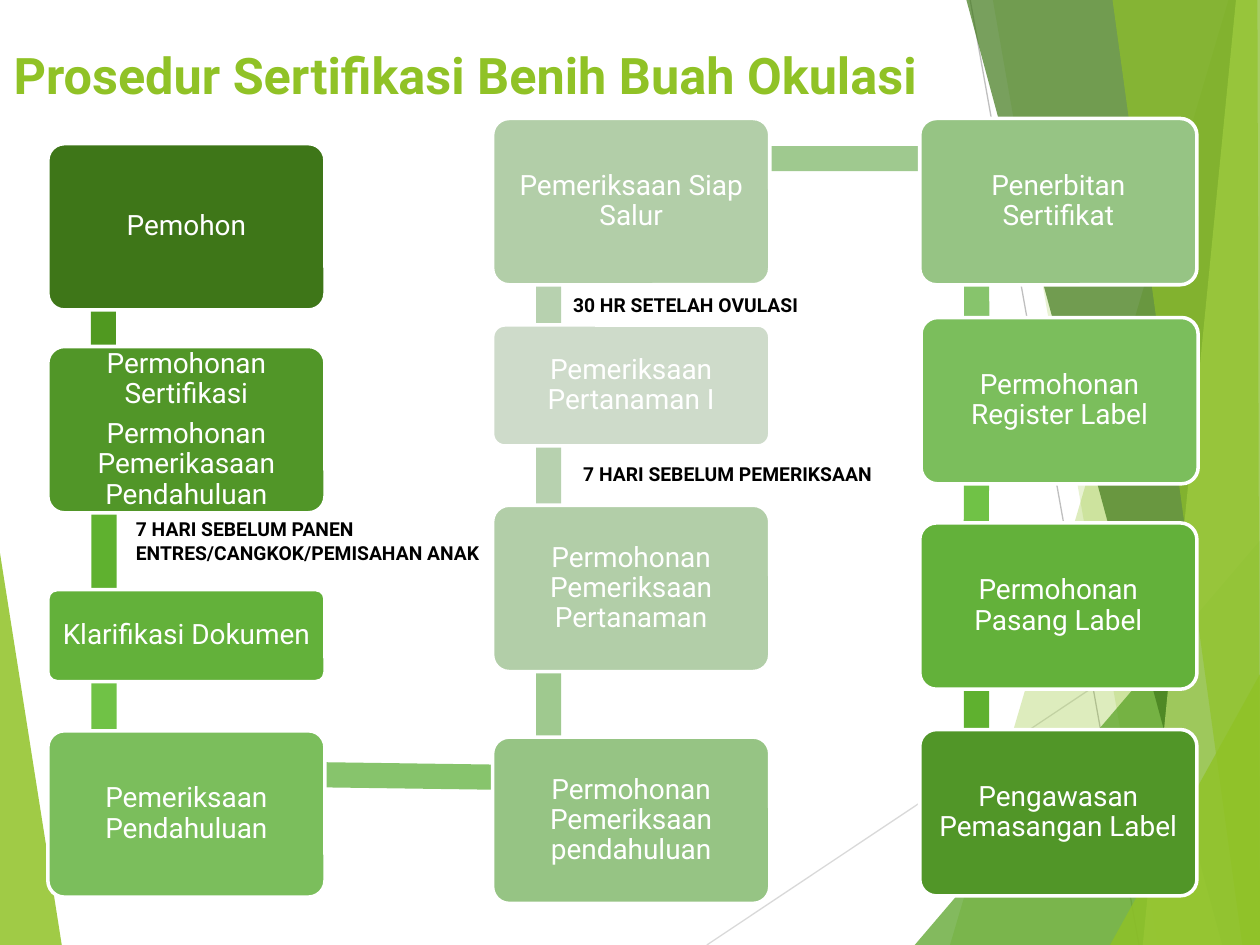
from dataclasses import dataclass
from lxml.etree import SubElement
from pptx import Presentation
from pptx.dml.color import RGBColor
from pptx.enum.shapes import MSO_CONNECTOR, MSO_SHAPE
from pptx.enum.text import MSO_ANCHOR, PP_ALIGN
from pptx.oxml.ns import qn
from pptx.slide import Slide
from pptx.util import Inches, Pt

FACETS = [
    ("90C226", 85, [(0, 4.39), (0.49, 7.5), (0, 7.5)]),
    ("90C226", 30, [(9.75, 0), (7.54, 7.5), (10, 7.5), (10, 0)]),
    ("90C226", 20, [(7.88, 0), (9.19, 7.5), (10, 7.5), (10, 0)]),
    ("54A021", 72, [(7.26, 7.5), (10, 4.29), (10, 7.5)]),
    ("3F7819", 70, [(7.67, 0), (9.7, 7.5), (10, 7.5), (10, 0)]),
    ("C0E474", 70, [(9.81, 0), (9.07, 7.5), (10, 7.5), (10, 0)]),
    ("90C226", 65, [(8.83, 0), (9.86, 7.5), (10, 7.5), (9.98, 0)]),
    ("90C226", 80, [(8.81, 7.5), (10, 5.35), (10, 7.5)]),
]
RAYS = [("D9D9D9", (5.61, 7.5), (10, 4.57)), ("BFBFBF", (7.7, 0), (9.04, 7.5))]
LINKS = [
    (0.02, 2.16, 1.6, 90, "509920"),
    (0.01, 3.79, 1.63, 90, "5FB12F"),
    (0.12, 5.31, 1.41, 90, "70C246"),
    (0.82, 6.05, 3.53, 0.8, "87C46C"),
    (3.44, 5.15, 1.83, 270, "9FC98F"),
    (3.55, 3.43, 1.61, 270, "B7D1AF"),
    (3.63, 1.89, 1.45, 270, "B7D1AF"),
    (4.36, 1.16, 3.38, 0, "9FC98F"),
    (6.96, 1.95, 1.58, 89.8, "87C46C"),
    (6.94, 3.56, 1.62, 90.2, "70C246"),
    (6.93, 5.19, 1.64, 90.1, "5FB12F"),
]
STEPS = [
    (0.38, 1.14, 1.32, "3E7618", "Pemohon"),
    (0.38, 2.75, 1.32, "519628", "Permohonan Sertifikasi\nPermohonan Pemerikasaan Pendahuluan"),
    (0.38, 4.68, 0.73, "63B13A", "Klarifikasi Dokumen"),
    (0.38, 5.8, 1.32, "7BBE5C", "Pemeriksaan Pendahuluan"),
    (3.91, 5.85, 1.32, "96C484", "Permohonan Pemeriksaan pendahuluan"),
    (3.91, 4.01, 1.32, "B2CEA8", "Permohonan Pemeriksaan Pertanaman"),
    (3.91, 2.58, 0.96, "CEDBCA", "Pemeriksaan Pertanaman I"),
    (3.91, 0.94, 1.32, "B2CEA8", "Pemeriksaan Siap Salur"),
    (7.3, 0.94, 1.32, "96C484", "Penerbitan Sertifikat"),
    (7.31, 2.52, 1.32, "7BBE5C", "Permohonan Register Label"),
    (7.3, 4.15, 1.32, "63B13A", "Permohonan Pasang Label"),
    (7.3, 5.79, 1.32, "519628", "Pengawasan Pemasangan Label"),
]
NOTES = [
    (0.98, 4.06, 0.66, "7 HARI SEBELUM PANEN ENTRES/CANGKOK/PEMISAHAN ANAK"),
    (4.53, 3.62, 0.29, "7 HARI SEBELUM PEMERIKSAAN"),
    (4.45, 2.28, 0.29, "30 HR SETELAH OVULASI"),
]


def color(value):
    """Turn a hex string into a colour."""
    return RGBColor.from_string(value)


def write(frame, text, *, font, size, fill, bold=False, align=PP_ALIGN.LEFT,
          spacing=None, after=0):
    """Write each line of the text as a formatted paragraph."""
    frame.word_wrap = True
    for index, line in enumerate(text.split("\n")):
        paragraph = frame.add_paragraph() if index else frame.paragraphs[0]
        paragraph.alignment = align
        paragraph.line_spacing = spacing
        paragraph.space_after = Pt(after)
        run = paragraph.add_run()
        run.text = line
        run.font.name = font
        run.font.size = Pt(size)
        run.font.bold = bold
        run.font.color.rgb = color(fill)


@dataclass
class FlowSlide:
    """Hold the slide and the style of the flow chart."""

    slide: Slide
    font: str = "Roboto"
    step_width: float = 2.2
    link_width: float = 0.2
    inset: float = 0.07

    def paint(self, shape, fill, alpha=100):
        """Give a shape a plain fill without line or shadow."""
        shape.shadow.inherit = False
        shape.line.fill.background()
        shape.fill.solid()
        shape.fill.fore_color.rgb = color(fill)
        if alpha < 100:
            tint = shape.fill._xPr.find(".//" + qn("a:srgbClr"))
            SubElement(tint, qn("a:alpha")).set("val", str(alpha * 1000))

    def facet(self, fill, alpha, points):
        """Draw a translucent background polygon."""
        start, *rest = [(Inches(x), Inches(y)) for x, y in points]
        builder = self.slide.shapes.build_freeform(*start)
        builder.add_line_segments(rest, close=True)
        self.paint(builder.convert_to_shape(), fill, alpha)

    def ray(self, line_color, start, end):
        """Draw a thin background line."""
        ends = [Inches(value) for value in start + end]
        connector = self.slide.shapes.add_connector(MSO_CONNECTOR.STRAIGHT, *ends)
        connector.line.color.rgb = color(line_color)
        connector.line.width = Pt(0.75)
        SubElement(connector._element.spPr, qn("a:effectLst"))

    def link(self, left, top, length, rotation, fill):
        """Draw a bar that links two steps."""
        shape = self.slide.shapes.add_shape(
            MSO_SHAPE.RECTANGLE, Inches(left), Inches(top), Inches(length), Inches(self.link_width))
        shape.rotation = rotation
        self.paint(shape, fill)

    def step(self, left, top, height, fill, text):
        """Draw a rounded box with a step of the procedure."""
        shape = self.slide.shapes.add_shape(
            MSO_SHAPE.ROUNDED_RECTANGLE, Inches(left), Inches(top),
            Inches(self.step_width), Inches(height))
        shape.adjustments[0] = 0.1
        self.paint(shape, fill)
        shape.line.color.rgb = color("FFFFFF")
        shape.line.width = Pt(2)
        frame = shape.text_frame
        frame.vertical_anchor = MSO_ANCHOR.MIDDLE
        frame.margin_left = frame.margin_right = Inches(self.inset)
        frame.margin_top = frame.margin_bottom = Inches(self.inset)
        write(frame, text, font=self.font, size=16, fill="FFFFFF",
              align=PP_ALIGN.CENTER, spacing=0.9, after=5.6)

    def label(self, left, top, width, height, text, size, fill):
        """Place bold text on the slide."""
        shape = self.slide.shapes.add_textbox(
            Inches(left), Inches(top), Inches(width), Inches(height))
        write(shape.text_frame, text, font=self.font, size=size, fill=fill, bold=True)


def main():
    """Build and save the presentation."""
    presentation = Presentation()
    presentation.slide_width = Inches(10)
    presentation.slide_height = Inches(7.5)
    flow = FlowSlide(presentation.slides.add_slide(presentation.slide_layouts[6]))
    first_facet, *right_facets = FACETS
    flow.facet(*first_facet)
    for ray in RAYS:
        flow.ray(*ray)
    for facet in right_facets:
        flow.facet(*facet)
    flow.label(0.01, 0.3, 9.7, 0.47, "Prosedur Sertifikasi Benih Buah Okulasi", 28.8, "90C226")
    for link in LINKS:
        flow.link(*link)
    for step in STEPS:
        flow.step(*step)
    for left, top, height, text in NOTES:
        flow.label(left, top, 2.95, height, text, 11, "000000")
    presentation.save("out.pptx")


if __name__ == "__main__":
    main()
